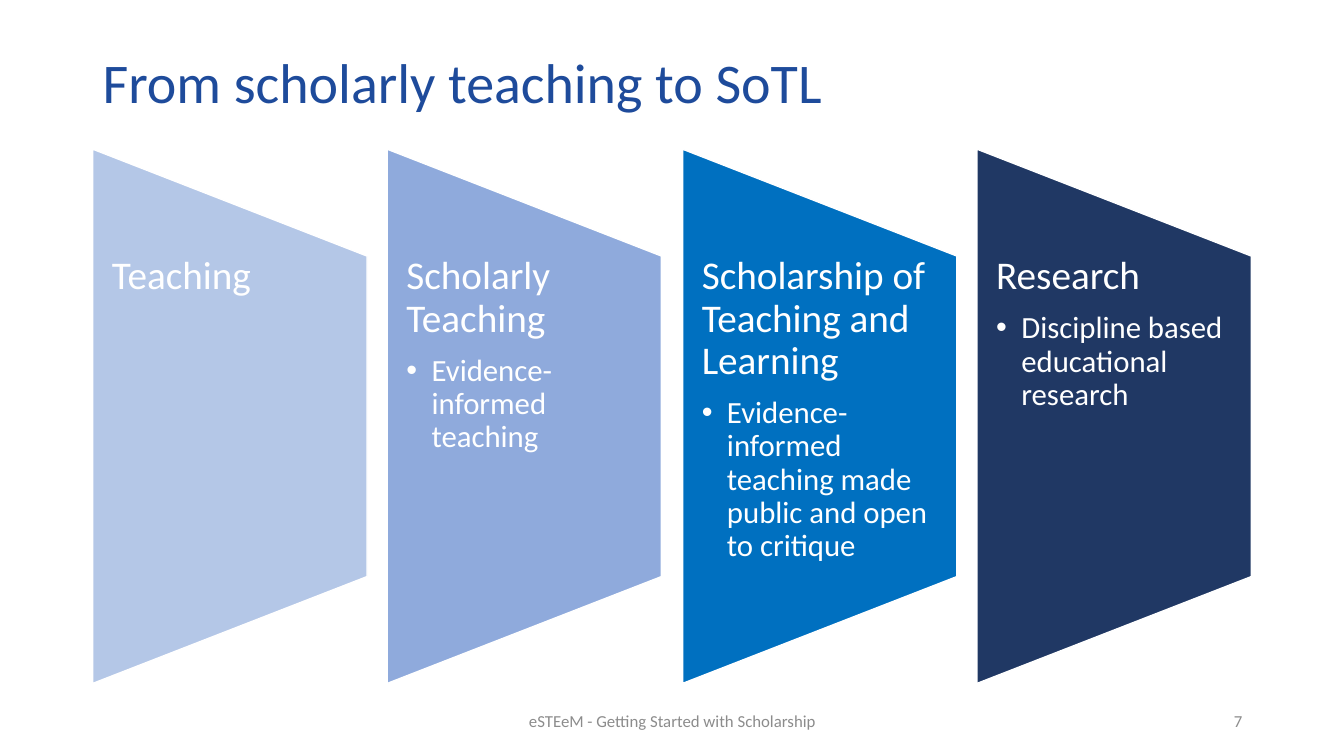
from lxml.etree import SubElement
from pptx import Presentation
from pptx.dml.color import RGBColor
from pptx.enum.shapes import MSO_SHAPE
from pptx.enum.text import MSO_ANCHOR, PP_ALIGN
from pptx.oxml.ns import qn
from pptx.util import Pt

PX = 9144  # EMU per px, 100 px to the inch

WHITE = RGBColor(0xFF, 0xFF, 0xFF)
TITLE_BLUE = RGBColor(0x1E, 0x4B, 0x9B)
FOOTER_GREY = RGBColor(0x8C, 0x8C, 0x8C)

PANELS = [
    ("Teaching", None, RGBColor(0xB4, 0xC7, 0xE7)),
    ("Scholarly Teaching", "Evidence-informed teaching", RGBColor(0x8F, 0xAA, 0xDC)),
    ("Scholarship of Teaching and Learning",
     "Evidence-informed teaching made public and open to critique",
     RGBColor(0x00, 0x70, 0xC0)),
    ("Research", "Discipline based educational research", RGBColor(0x20, 0x38, 0x64)),
]
PANEL_LEFT, PANEL_TOP = 92, 148
PANEL_WIDTH, PANEL_HEIGHT = 272, 530
PANEL_SPAN = 1169  # from the left edge of the first panel to the last, plus rounding
TEXT_TOP, TEXT_HEIGHT = 254, 318


def add_text_frame(left, top, width, height, anchor=MSO_ANCHOR.TOP):
    box = slide.shapes.add_textbox(left * PX, top * PX, width * PX, height * PX)
    frame = box.text_frame
    frame.word_wrap = True
    frame.vertical_anchor = anchor
    return frame


def add_styled_run(paragraph, text, size, color):
    run = paragraph.add_run()
    run.text = text
    run.font.name = "Calibri"
    run.font.size = Pt(size)
    run.font.color.rgb = color


presentation = Presentation()
presentation.slide_width = 1333 * PX
presentation.slide_height = 750 * PX
slide = presentation.slides.add_slide(presentation.slide_layouts[6])

title = add_text_frame(92, 40, 1150, 90, MSO_ANCHOR.MIDDLE).paragraphs[0]
title.line_spacing = 0.9
add_styled_run(title, "From scholarly teaching to SoTL", 40, TITLE_BLUE)

for index, (heading, detail, color) in enumerate(PANELS):
    left = PANEL_LEFT + index * 585 // 2

    # Turned a quarter, the shape's width becomes the panel's height.
    offset = (PANEL_HEIGHT - PANEL_WIDTH) // 2
    panel = slide.shapes.add_shape(
        MSO_SHAPE.FLOWCHART_MANUAL_OPERATION,
        (left - offset) * PX, (PANEL_TOP + offset) * PX,
        PANEL_HEIGHT * PX, PANEL_WIDTH * PX)
    panel.rotation = 270
    panel.shadow.inherit = False
    panel.fill.solid()
    panel.fill.fore_color.rgb = color
    panel.line.color.rgb = WHITE
    panel.line.width = Pt(1)

    frame = add_text_frame(left, TEXT_TOP, PANEL_WIDTH, TEXT_HEIGHT)
    frame.margin_left, frame.margin_right = 19 * PX, 20 * PX
    frame.margin_top = frame.margin_bottom = 0
    paragraph = frame.paragraphs[0]
    paragraph.line_spacing = 0.9
    paragraph.space_after = Pt(10)
    add_styled_run(paragraph, heading, 28, WHITE)

    if detail:
        bullet = frame.add_paragraph()
        bullet.level = 1
        bullet.line_spacing = 0.9
        bullet.space_after = Pt(3)
        properties = bullet._p.get_or_add_pPr()
        properties.set("marL", str(25 * PX))
        properties.set("indent", str(-25 * PX))
        SubElement(properties, qn("a:buFont"), typeface="Arial")
        SubElement(properties, qn("a:buChar"), char="•")
        add_styled_run(bullet, detail, 22, WHITE)

for left, width, alignment, text in [
    (442, 450, PP_ALIGN.CENTER, "eSTEeM - Getting Started with Scholarship"),
    (942, 300, PP_ALIGN.RIGHT, "7"),
]:
    footer = add_text_frame(left, 695, width, 40, MSO_ANCHOR.MIDDLE).paragraphs[0]
    footer.alignment = alignment
    add_styled_run(footer, text, 12, FOOTER_GREY)

presentation.save("out.pptx")
